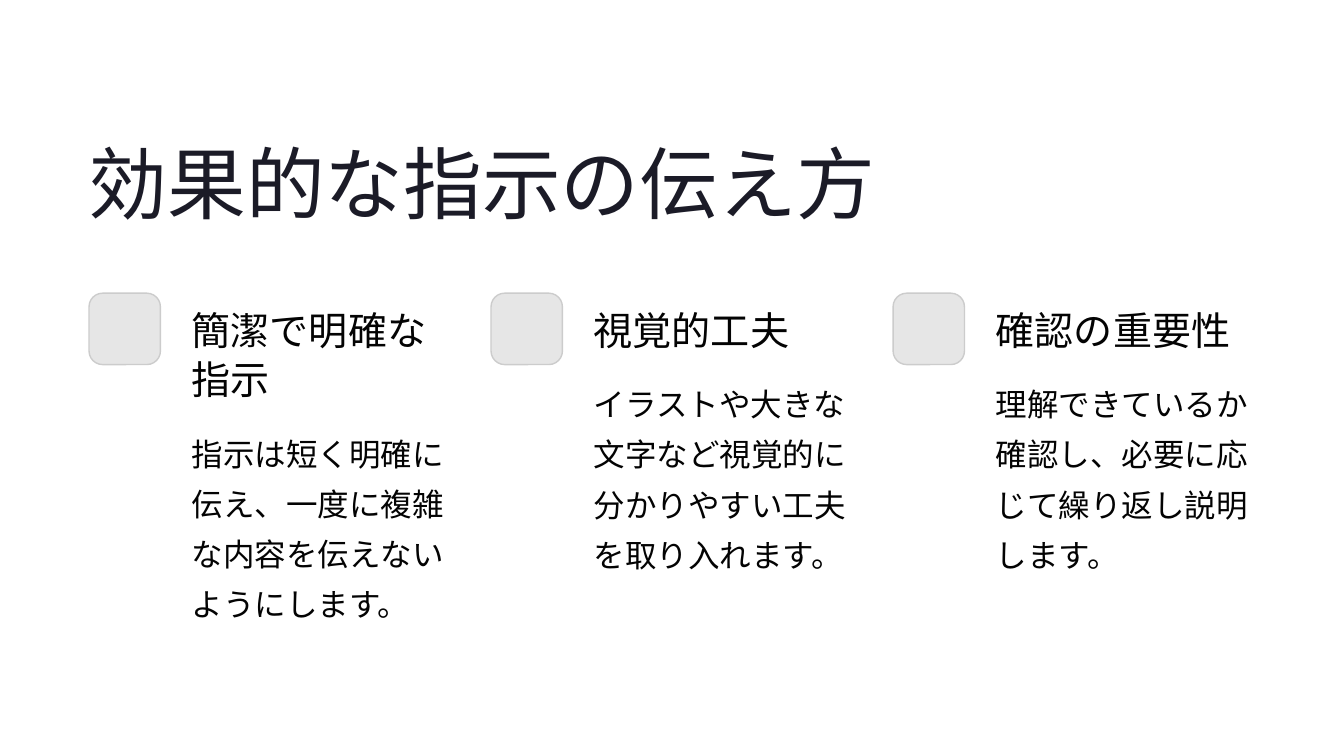
"""Build a slide with a title and three columns of advice on giving instructions."""
from dataclasses import dataclass

from pptx import Presentation
from pptx.dml.color import RGBColor
from pptx.enum.shapes import MSO_SHAPE
from pptx.util import Pt


@dataclass(frozen=True)
class TextStyle:
    font: str
    size: float
    leading: float
    color: str


@dataclass(frozen=True)
class Theme:
    title: TextStyle = TextStyle("Inter", 67.5, 84.5, "1B1B27")
    heading: TextStyle = TextStyle("Inter", 33.5, 42, "030303")
    body: TextStyle = TextStyle("Lato", 27, 43, "030303")
    tile_fill: str = "E6E6E6"
    tile_line: str = "CCCCCC"


THEME = Theme()
LEFT = 76.3
COLUMN_PITCH = 344.6
TILE_TOP = 251.3
TILE_SIZE = 61.2
TEXT_INDENT = 88.1
TEXT_WIDTH = 222.5
HEADING_TOP = 260.6
HEADING_LINE = 42.5
HEADING_GAP = 16.6
BODY_HEIGHT = 173.5

COLUMNS = [
    ("簡潔で明確な指示", 2, "指示は短く明確に伝え、一度に複雑な内容を伝えないようにします。"),
    ("視覚的工夫", 1, "イラストや大きな文字など視覚的に分かりやすい工夫を取り入れます。"),
    ("確認の重要性", 1, "理解できているか確認し、必要に応じて繰り返し説明します。"),
]


def add_text(s, text, style, left, top, width, height, wrap=True):
    tf = s.shapes.add_textbox(Pt(left), Pt(top), Pt(width), Pt(height)).text_frame
    tf.margin_left = tf.margin_top = tf.margin_right = tf.margin_bottom = 0
    tf.word_wrap = wrap
    p = tf.paragraphs[0]
    p.text = text
    p.line_spacing = Pt(style.leading)
    p.font.name = style.font
    p.font.size = Pt(style.size)
    p.font.color.rgb = RGBColor.from_string(style.color)


def add_tile(s, left):
    sp = s.shapes.add_shape(MSO_SHAPE.ROUNDED_RECTANGLE, Pt(left), Pt(TILE_TOP),
                            Pt(TILE_SIZE), Pt(TILE_SIZE))
    sp.adjustments[0] = 0.19
    sp.shadow.inherit = False
    sp.fill.solid()
    sp.fill.fore_color.rgb = RGBColor.from_string(THEME.tile_fill)
    sp.line.color.rgb = RGBColor.from_string(THEME.tile_line)
    sp.line.width = Pt(1.2)


def add_column(s, left, heading, lines, body):
    add_tile(s, left)
    text_left = left + TEXT_INDENT
    heading_height = lines * HEADING_LINE
    add_text(s, heading, THEME.heading, text_left, HEADING_TOP,
             TEXT_WIDTH, heading_height, wrap=lines > 1)
    add_text(s, body, THEME.body, text_left, HEADING_TOP + heading_height + HEADING_GAP,
             TEXT_WIDTH, BODY_HEIGHT)


def main():
    prs = Presentation()
    prs.slide_width, prs.slide_height = Pt(1152), Pt(648)
    s = prs.slides.add_slide(prs.slide_layouts[6])
    add_text(s, "効果的な指示の伝え方", THEME.title, LEFT, 112.3, 679, 85, wrap=False)
    for i, (heading, lines, body) in enumerate(COLUMNS):
        add_column(s, LEFT + i * COLUMN_PITCH, heading, lines, body)
    prs.save("out.pptx")


if __name__ == "__main__":
    main()
